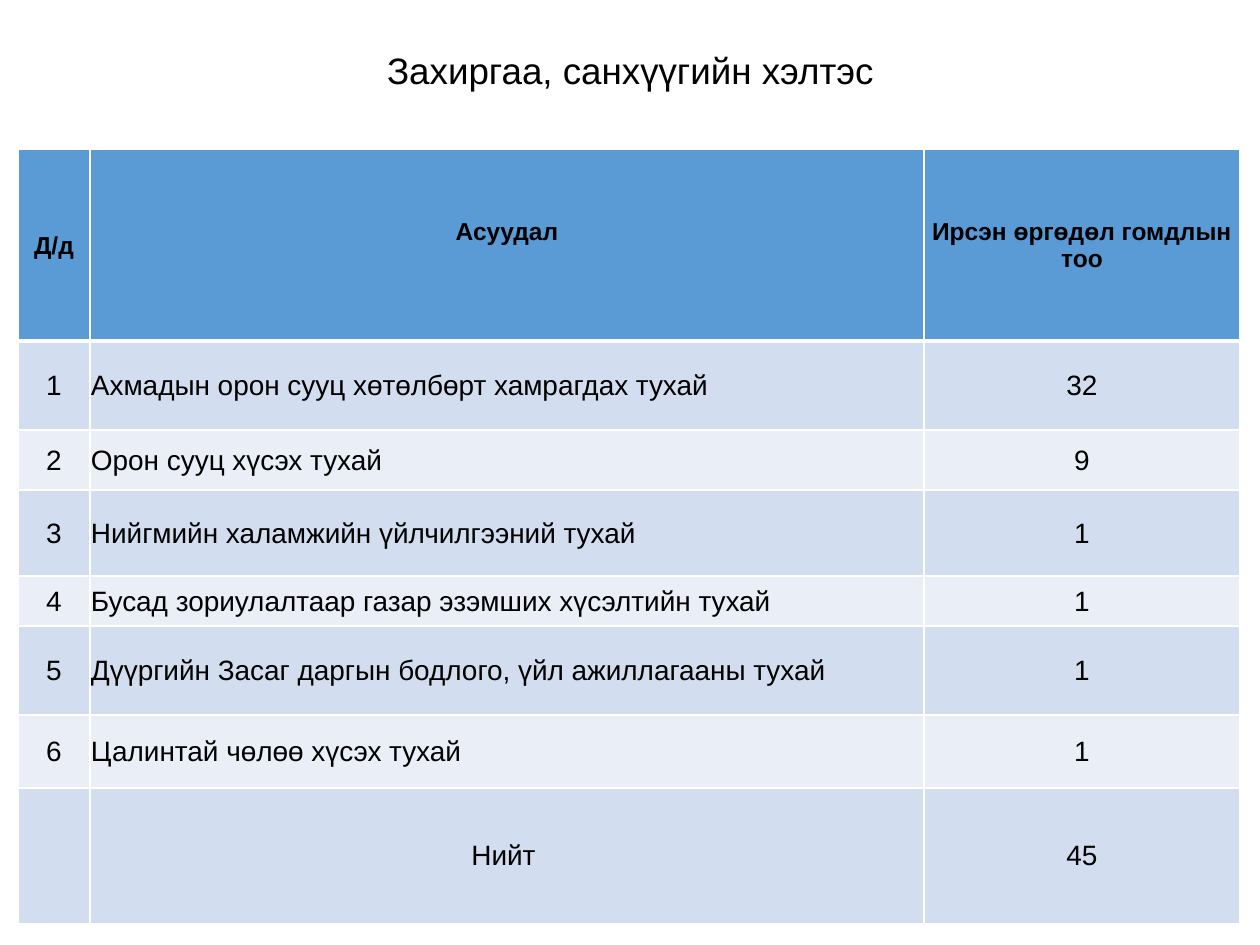
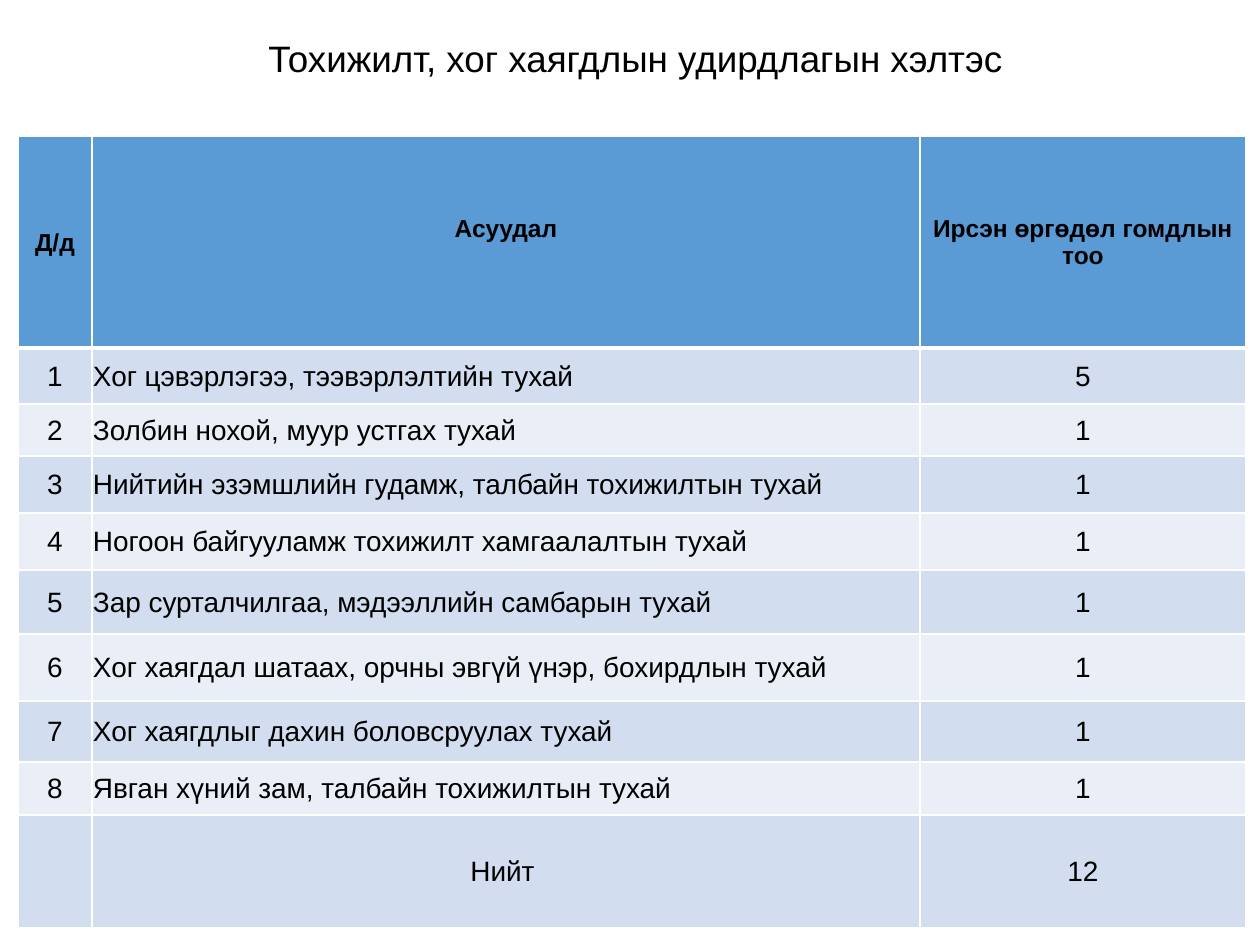
from lxml import etree
from pptx import Presentation
from pptx.dml.color import RGBColor
from pptx.enum.text import MSO_ANCHOR, MSO_AUTO_SIZE, PP_ALIGN
from pptx.oxml.ns import qn
from pptx.util import Pt

CENTER, LEFT = PP_ALIGN.CENTER, PP_ALIGN.LEFT
MIDDLE = MSO_ANCHOR.MIDDLE
NO_AUTOFIT = MSO_AUTO_SIZE.NONE

# Shared style
EMU_PER_PX = 914400 / 126
SLIDE_WIDTH, SLIDE_HEIGHT = 1260, 945
MARGIN_LEFT = 18
FONT = "Arial"
BLACK, WHITE = "000000", "FFFFFF"
HEADER_FILL = "5B9BD5"
BAND_FILLS = ("D2DEEF", "EAEFF7")
HEADER = ("Д/д", "Асуудал", "Ирсэн өргөдөл гомдлын тоо")
TOTAL_LABEL = "Нийт"
THIN, THICK = 1, 3
HEADER_LIFT = 28   # raises the middle heading by half this amount
TOTAL_INSET = 8    # moves the total label slightly to the left


def px(length):
    return round(length * EMU_PER_PX)


def color(hex_string):
    return RGBColor.from_string(hex_string)


class Deck:
    def __init__(self):
        self.presentation = Presentation()
        self.presentation.slide_width = px(SLIDE_WIDTH)
        self.presentation.slide_height = px(SLIDE_HEIGHT)
        self.slide = None

    def add_slide(self):
        layout = self.presentation.slide_layouts[5]
        self.slide = self.presentation.slides.add_slide(layout)

    def style_paragraph(self, paragraph, size, bold=False, align=CENTER):
        paragraph.alignment = align
        font = paragraph.font
        font.name, font.size, font.bold = FONT, Pt(size), bold
        font.color.rgb = color(BLACK)

    def title(self, text, height, indent):
        title = self.slide.shapes.title
        title.left, title.top = px(MARGIN_LEFT), px(24)
        title.width, title.height = px(1206), px(height)
        frame = title.text_frame
        frame.text = text
        frame.word_wrap = True
        frame.auto_size = NO_AUTOFIT
        frame.vertical_anchor = MIDDLE
        frame.margin_left, frame.margin_right = px(13 + indent), px(13)
        paragraph = frame.paragraphs[0]
        paragraph.line_spacing = 0.9
        self.style_paragraph(paragraph, 21)

    def borders(self, cell, top, bottom):
        properties = cell._tc.get_or_add_tcPr()
        widths = {"a:lnL": THIN, "a:lnR": THIN, "a:lnT": top, "a:lnB": bottom}
        for tag, width in widths.items():
            line = etree.SubElement(properties, qn(tag), w=str(Pt(width)))
            fill = etree.SubElement(line, qn("a:solidFill"))
            etree.SubElement(fill, qn("a:srgbClr"), val=WHITE)

    def cell(self, cell, text, row, column, is_total):
        is_header = row == 0
        self.borders(cell, THICK if row == 1 else THIN, THICK if is_header else THIN)
        cell.fill.solid()
        cell.fill.fore_color.rgb = color(HEADER_FILL if is_header else BAND_FILLS[(row - 1) % 2])
        cell.vertical_anchor = MIDDLE
        cell.margin_left = cell.margin_right = cell.margin_top = px(1)
        cell.margin_bottom = 0
        if column == 1 and is_header:
            cell.margin_bottom = px(HEADER_LIFT)
        if column == 1 and is_total:
            cell.margin_right = px(TOTAL_INSET)
        cell.text = text
        is_issue = column == 1 and not is_header and not is_total
        self.style_paragraph(cell.text_frame.paragraphs[0], 14 if is_header else 16,
                             is_header, LEFT if is_issue else CENTER)

    def table(self, top, column_widths, row_heights, issues):
        total = sum(count for _, count in issues)
        numbered = [(str(number), issue, str(count))
                    for number, (issue, count) in enumerate(issues, 1)]
        rows = [HEADER, *numbered, ("", TOTAL_LABEL, str(total))]
        table = self.slide.shapes.add_table(
            len(rows), len(HEADER), px(MARGIN_LEFT), px(top),
            px(sum(column_widths)), px(sum(row_heights))).table
        for column, width in zip(table.columns, column_widths):
            column.width = px(width)
        for row, height in zip(table.rows, row_heights):
            row.height = px(height)
        for row, texts in enumerate(rows):
            for column, text in enumerate(texts):
                self.cell(table.cell(row, column), text, row, column, row == len(rows) - 1)


def main():
    deck = Deck()

    # Administration and finance department
    deck.add_slide()
    deck.title("Захиргаа, санхүүгийн хэлтэс", height=98, indent=19)
    deck.table(149, (72, 834, 316), (192, 89, 60, 86, 50, 89, 73, 136), [
        ("Ахмадын орон сууц хөтөлбөрт хамрагдах тухай", 32),
        ("Орон сууц хүсэх тухай", 9),
        ("Нийгмийн халамжийн үйлчилгээний тухай", 1),
        ("Бусад зориулалтаар газар эзэмших хүсэлтийн тухай", 1),
        ("Дүүргийн Засаг даргын бодлого, үйл ажиллагааны тухай", 1),
        ("Цалинтай чөлөө хүсэх тухай", 1),
    ])

    # Public amenities and waste management department
    deck.add_slide()
    deck.title("Тохижилт, хог хаягдлын удирдлагын хэлтэс", height=74, indent=29)
    deck.table(136, (74, 828, 326), (212, 56, 52, 57, 57, 64, 67, 61, 53, 113), [
        ("Хог цэвэрлэгээ, тээвэрлэлтийн тухай", 5),
        ("Золбин нохой, муур устгах тухай", 1),
        ("Нийтийн эзэмшлийн гудамж, талбайн тохижилтын тухай", 1),
        ("Ногоон байгууламж тохижилт хамгаалалтын тухай", 1),
        ("Зар сурталчилгаа, мэдээллийн самбарын тухай", 1),
        ("Хог хаягдал шатаах, орчны эвгүй үнэр, бохирдлын тухай", 1),
        ("Хог хаягдлыг дахин боловсруулах тухай", 1),
        ("Явган хүний зам, талбайн тохижилтын тухай", 1),
    ])

    deck.presentation.save("out.pptx")


if __name__ == "__main__":
    main()
